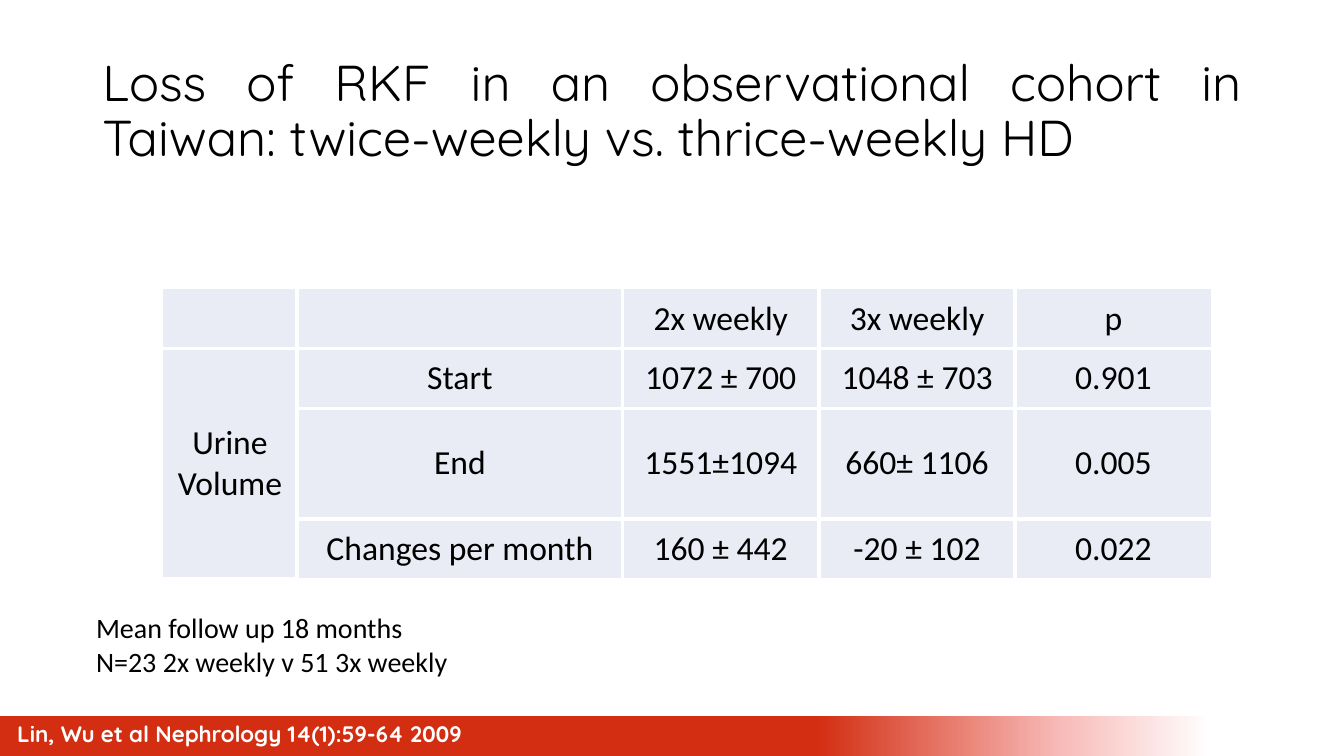
from copy import deepcopy

from lxml.etree import SubElement
from pptx import Presentation
from pptx.dml.color import RGBColor
from pptx.enum.shapes import MSO_SHAPE
from pptx.enum.text import MSO_ANCHOR, PP_ALIGN
from pptx.oxml.ns import qn
from pptx.util import Pt

PX = 9525  # 96 px to the inch
BLACK = RGBColor(0x00, 0x00, 0x00)
WHITE = RGBColor(0xFF, 0xFF, 0xFF)
RED = RGBColor(0xD3, 0x2E, 0x12)
PINK = RGBColor(0xF8, 0xBC, 0xBA)
CELL_BLUE = RGBColor(0xE9, 0xEB, 0xF5)


def style(para, size, font, color, bold=False):
    for span in para.runs:
        span.font.size = Pt(size)
        span.font.name = font
        span.font.color.rgb = color
        span.font.bold = bold


def add_text(left, top, width, height, text, anchor=MSO_ANCHOR.TOP):
    box = page.shapes.add_textbox(left * PX, top * PX, width * PX, height * PX)
    box.text_frame.word_wrap = True
    box.text_frame.vertical_anchor = anchor
    box.text_frame.text = text
    return box.text_frame.paragraphs


deck = Presentation()
deck.slide_width, deck.slide_height = 1280 * PX, 720 * PX
page = deck.slides.add_slide(deck.slide_layouts[6])

# Footer band fading from red to white
band = page.shapes.add_shape(MSO_SHAPE.RECTANGLE, 0, 682 * PX, 1178 * PX, 38 * PX)
band.shadow.inherit = False
band.line.fill.background()
band.fill.gradient()
band.fill.gradient_angle = 0
stop_list = band._element.spPr.find(".//" + qn("a:gsLst"))
stop_list.append(deepcopy(stop_list[-1]))
fade = [(0.66, RED), (0.86, PINK), (0.98, WHITE)]
for stop, (position, color) in zip(band.fill.gradient_stops, fade):
    stop.position = position
    stop.color.rgb = color

# Title
title = add_text(88, 38, 1104, 139,
                 "Loss of RKF in an observational cohort in Taiwan: "
                 "twice-weekly vs. thrice-weekly HD", MSO_ANCHOR.MIDDLE)[0]
title.alignment = PP_ALIGN.JUSTIFY
title.line_spacing = 0.9
style(title, 36, "Quicksand", BLACK)

# Citation on the band
citation = add_text(7, 681, 802, 38, "Lin, Wu et al Nephrology 14(1):59-64 2009",
                    MSO_ANCHOR.MIDDLE)[0]
citation.line_spacing = 0.9
style(citation, 16, "Quicksand", WHITE, bold=True)

# Urine volume table
rows = [
    ["", "", "2x weekly", "3x weekly", "p"],
    ["Urine Volume", "Start", "1072 ± 700", "1048 ± 703", "0.901"],
    ["", "End", "1551±1094", "660± 1106", "0.005"],
    ["", "Changes per month", "160 ± 442", "-20 ± 102", "0.022"],
]
widths = [128, 310, 187, 187, 187]
heights = [57, 57, 105, 57]
last_row, last_column = len(rows) - 1, len(widths) - 1
table = page.shapes.add_table(len(rows), len(widths), 155 * PX, 275 * PX,
                              sum(widths) * PX, sum(heights) * PX).table
table.first_row = table.horz_banding = False
for column, width in zip(table.columns, widths):
    column.width = width * PX
for row, height in zip(table.rows, heights):
    row.height = height * PX
table.cell(1, 0).merge(table.cell(last_row, 0))

for r, texts in enumerate(rows):
    for c, text in enumerate(texts):
        cell = table.cell(r, c)
        cell.margin_left = cell.margin_right = 0
        cell.margin_top = cell.margin_bottom = 0
        cell.vertical_anchor = MSO_ANCHOR.MIDDLE
        # White rules: thin on the outer edge, thick inside
        outer_edges = {"lnL": c == 0, "lnR": c == last_column,
                       "lnT": r == 0, "lnB": r == last_row}
        for edge, outer in outer_edges.items():
            rule = SubElement(cell._tc.get_or_add_tcPr(), qn("a:" + edge),
                              w=str(Pt(1 if outer else 3)))
            fill = SubElement(rule, qn("a:solidFill"))
            SubElement(fill, qn("a:srgbClr"), val=str(WHITE))
        cell.fill.solid()
        cell.fill.fore_color.rgb = CELL_BLUE
        if text:
            cell.text_frame.text = text
            para = cell.text_frame.paragraphs[0]
            para.alignment = PP_ALIGN.CENTER
            style(para, 24, "Calibri", BLACK)

# Cohort notes
for para in add_text(82, 577, 640, 74,
                     "Mean follow up 18 months\nN=23 2x weekly v 51 3x weekly"):
    style(para, 20, "Calibri", BLACK)

deck.save("out.pptx")
